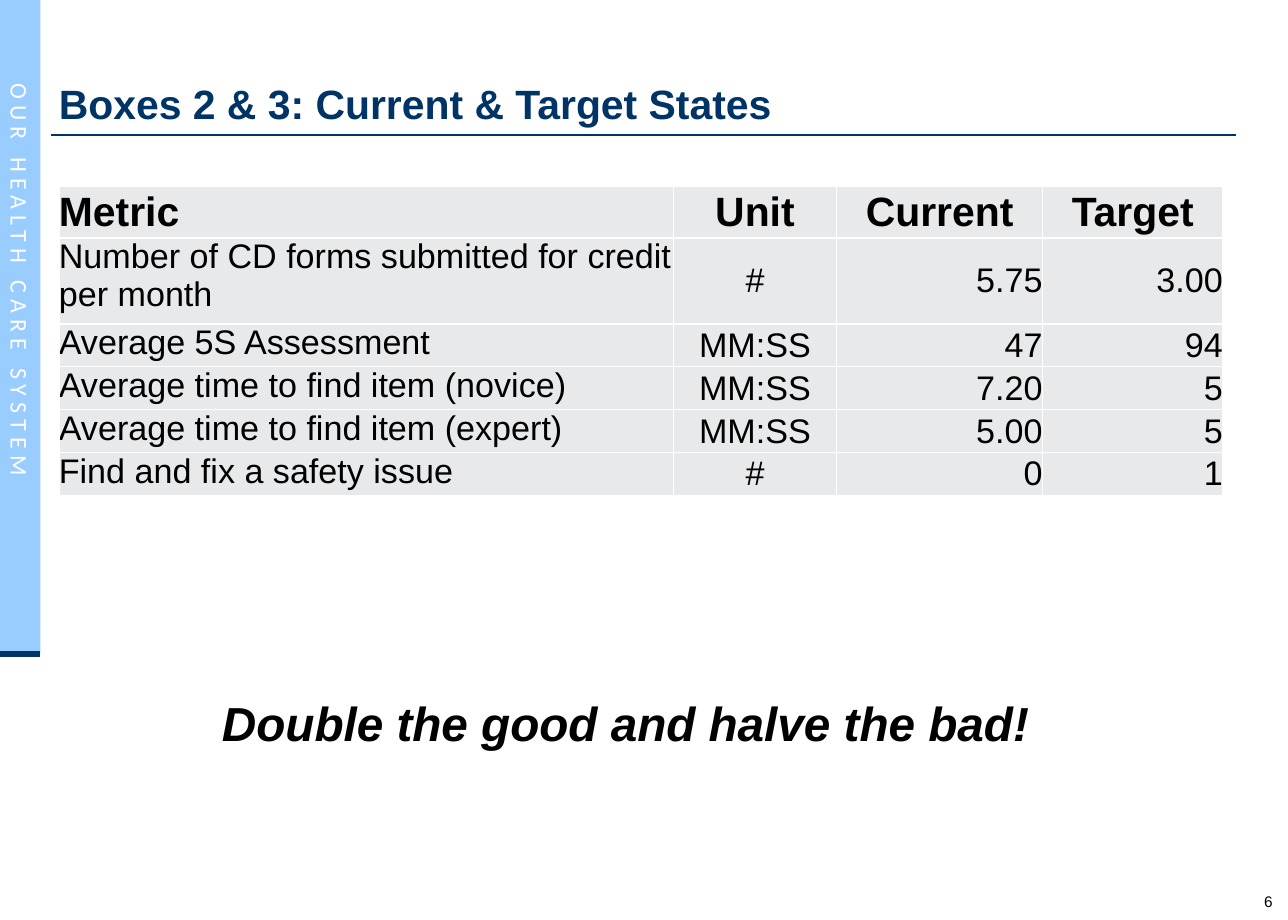
import lxml.etree
import pptx
import pptx.dml.color
import pptx.enum.shapes
import pptx.enum.text
import pptx.oxml.ns
import pptx.util

ALIGN = pptx.enum.text.PP_ALIGN
ANCHOR = pptx.enum.text.MSO_ANCHOR
PX = 9144


def px(*sizes):
    return [pptx.util.Emu(size * PX) for size in sizes]


def tint(code):
    return pptx.dml.color.RGBColor.from_string(code)


def add_tag(parent, name, **attrs):
    return lxml.etree.SubElement(parent, pptx.oxml.ns.qn(name), **attrs)


def write(frame, words, size=20, color="000000", face="Arial", bold=False,
          slant=False, align=ALIGN.LEFT, track=0):
    par = frame.paragraphs[0]
    par.alignment = align
    run = par.add_run()
    run.text = words
    font = run.font
    font.name, font.size = face, pptx.util.Pt(size)
    font.bold, font.italic = bold, slant
    font.color.rgb = tint(color)
    if track:
        run._r.get_or_add_rPr().set("spc", str(track))


class Deck:
    """Holds the style and the current slide, and adds each kind of element."""

    navy, sky, gray, white = "003366", "99CCFF", "E8E9EB", "FFFFFF"

    def __init__(self, wide, high):
        self.file = pptx.Presentation()
        self.file.slide_width, self.file.slide_height = px(wide, high)
        self.slide = self.file.slides.add_slide(self.file.slide_layouts[5])
        self.shapes = self.slide.shapes

    def title(self, words, left, top, wide, high):
        head = self.shapes.title
        head.left, head.top, head.width, head.height = px(left, top, wide, high)
        frame = head.text_frame
        frame.auto_size = pptx.enum.text.MSO_AUTO_SIZE.NONE
        frame.word_wrap = True
        frame.vertical_anchor = ANCHOR.BOTTOM
        frame.margin_left = frame.margin_right = 0
        frame.margin_top, frame.margin_bottom = px(5, 5)
        write(frame, words, size=24, color=self.navy, bold=True)

    def block(self, left, top, wide, high, color):
        kind = pptx.enum.shapes.MSO_SHAPE.RECTANGLE
        shape = self.shapes.add_shape(kind, *px(left, top, wide, high))
        shape.shadow.inherit = False
        shape.fill.solid()
        shape.fill.fore_color.rgb = tint(color)
        shape.line.fill.background()

    def rule(self, left, right, top, weight):
        kind = pptx.enum.shapes.MSO_CONNECTOR.STRAIGHT
        line = self.shapes.add_connector(kind, *px(left, top, right, top))
        line.line.color.rgb = tint(self.navy)
        line.line.width = pptx.util.Pt(weight)
        add_tag(line._element.spPr, "a:effectLst")

    def text(self, words, left, top, wide, high, turn=0, tight=False, **style):
        box = self.shapes.add_textbox(*px(left, top, wide, high))
        box.rotation = turn
        frame = box.text_frame
        frame.word_wrap = not tight
        if tight:
            frame.margin_left = frame.margin_right = 0
            frame.margin_top = frame.margin_bottom = 0
        write(frame, words, **style)

    def cell(self, cell, words, anchor, **style):
        cell.margin_left = cell.margin_right = 0
        cell.margin_top = cell.margin_bottom = 0
        cell.vertical_anchor = anchor
        props = cell._tc.get_or_add_tcPr()
        for side in "LRTB":
            edge = add_tag(props, f"a:ln{side}", w="12700")
            add_tag(add_tag(edge, "a:solidFill"), "a:srgbClr", val=self.white)
        cell.fill.solid()
        cell.fill.fore_color.rgb = tint(self.gray)
        write(cell.text_frame, words, **style)

    def table(self, rows, left, top, widths, heights):
        area = px(left, top, sum(widths), sum(heights))
        table = self.shapes.add_table(len(rows), len(widths), *area).table
        table.first_row = table.horz_banding = False
        for col, wide in zip(table.columns, px(*widths)):
            col.width = wide
        for row, high in zip(table.rows, px(*heights)):
            row.height = high
        sides = [ALIGN.LEFT, ALIGN.CENTER, ALIGN.RIGHT, ALIGN.RIGHT]
        for r, row in enumerate(rows):
            for c, words in enumerate(row):
                head = r == 0
                anchor = ANCHOR.MIDDLE if head or c else ANCHOR.TOP
                align = ALIGN.CENTER if head and c else sides[c]
                self.cell(table.cell(r, c), words, anchor, align=align,
                          size=24 if head else 20, bold=head)


def main():
    deck = Deck(1050, 750)
    deck.block(0, 0, 33, 533, deck.sky)
    deck.rule(0, 33, 533, 3.5)
    deck.rule(42, 1008, 110, 1.5)
    deck.text("6", 1024, 727, 20, 15, tight=True, size=9, align=ALIGN.CENTER)
    deck.text("OUR HEALTH CARE SYSTEM", -205, 262, 442, 34, turn=90, size=14,
              color=deck.white, face="Calibri", track=360)
    deck.title("Boxes 2 & 3: Current & Target States", 48, 18, 950, 91)
    deck.text("Double the good and halve the bad!", 92, 561, 836, 57, size=28,
              bold=True, slant=True, align=ALIGN.CENTER)
    rows = [
        ("Metric", "Unit", "Current", "Target"),
        ("Number of CD forms submitted for credit per month", "#", "5.75", "3.00"),
        ("Average 5S Assessment", "MM:SS", "47", "94"),
        ("Average time to find item (novice)", "MM:SS", "7.20", "5"),
        ("Average time to find item (expert)", "MM:SS", "5.00", "5"),
        ("Find and fix a safety issue", "#", "0", "1"),
    ]
    deck.table(rows, 48, 152, [501, 133, 168, 147], [42, 70] + [35] * 4)
    deck.file.save("out.pptx")


if __name__ == "__main__":
    main()
